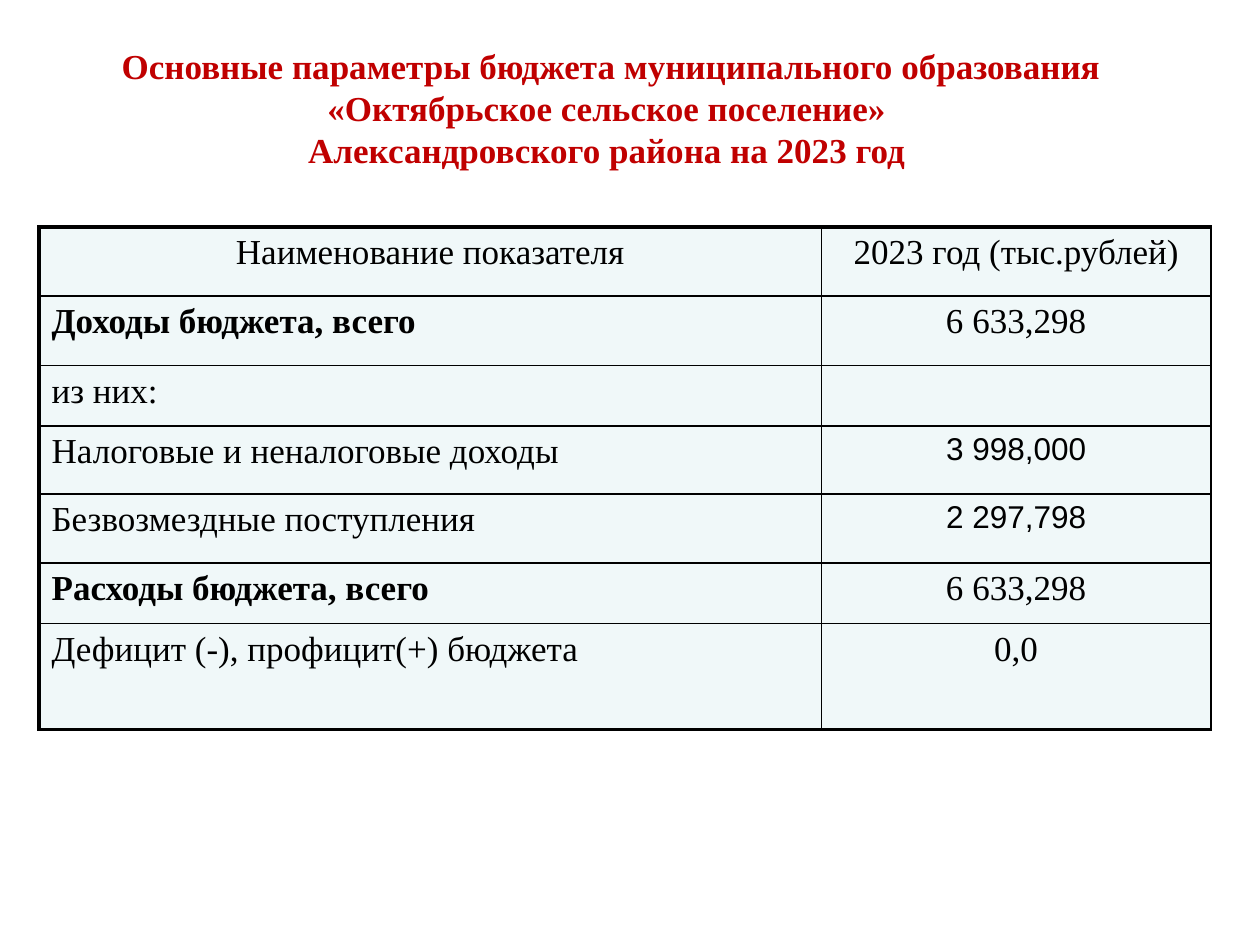
from lxml.etree import SubElement
from pptx import Presentation
from pptx.dml.color import RGBColor
from pptx.enum.text import MSO_ANCHOR as Anchor, PP_ALIGN as Align
from pptx.oxml.ns import qn
from pptx.util import Inches, Pt

WIDTH, HEIGHT = Inches(10), Inches(7.5)
SERIF, SANS = "Times New Roman", "Arial"
BLACK, RED, PALE = "000000", "C00000", "F0F8F9"
THIN, THICK = 1, 2.25
TITLE_BOX = (0.016, 0.04, 0.938, 0.148)
TABLE_BOX = (0.031, 0.24, 0.93, 0.532)
COLUMN_SHARES = (6.21, 3.09)
ROW_SHARES = (0.55, 0.55, 0.48, 0.54, 0.55, 0.48, 0.84)
TITLE = (
    "Основные параметры бюджета муниципального образования "
    "«Октябрьское сельское поселение» \vАлександровского района на 2023 год "
)
HEADER = ("Наименование показателя", "2023 год (тыс.рублей)")
BODY = {"name": SERIF, "size": Pt(20), "bold": False}
BOLD = {**BODY, "bold": True}
SMALL = {**BODY, "name": SANS, "size": Pt(18)}
INDICATORS = (
    ("Доходы бюджета, всего", BOLD, "6 633,298", BODY),
    ("из них:", BODY, "", BODY),
    ("Налоговые и неналоговые доходы", BODY, "3 998,000", SMALL),
    ("Безвозмездные поступления", BODY, "2 297,798", SMALL),
    ("Расходы бюджета, всего", BOLD, "6 633,298", BODY),
    ("Дефицит (-), профицит(+) бюджета", BODY, "0,0", BODY),
)


def color(value):
    """Turn a hex string into a colour."""
    return RGBColor.from_string(value)


def place(box):
    """Turn shares of the slide into left, top, width and height."""
    return [round(share * side) for share, side in zip(box, (WIDTH, HEIGHT) * 2)]


def write(frame, text, alignment, font_format, font_color):
    """Write one formatted paragraph into a text frame."""
    paragraph = frame.paragraphs[0]
    paragraph.text = text
    paragraph.alignment = alignment
    for font in [paragraph.font] + [run.font for run in paragraph.runs]:
        for name, value in font_format.items():
            setattr(font, name, value)
        font.color.rgb = color(font_color)


def set_borders(cell, widths):
    """Draw the left, right, top and bottom borders of a cell."""
    properties = cell._tc.get_or_add_tcPr()
    for index, (side, width) in enumerate(zip("LRTB", widths)):
        line = properties.makeelement(qn(f"a:ln{side}"), {"w": str(Pt(width))})
        fill = SubElement(line, qn("a:solidFill"))
        SubElement(fill, qn("a:srgbClr"), val=BLACK)
        properties.insert(index, line)


def add_title(slide, box):
    """Add the centred heading."""
    frame = slide.shapes.add_textbox(*place(box)).text_frame
    frame.word_wrap = True
    frame.vertical_anchor = Anchor.MIDDLE
    write(frame, TITLE, Align.CENTER, BOLD, RED)


def add_budget_table(slide, box):
    """Add the table of budget indicators."""
    left, top, width, height = place(box)
    rows = [(HEADER[0], BODY, HEADER[1], BODY), *INDICATORS]
    table = slide.shapes.add_table(len(rows), 2, left, top, width, height).table
    table.first_row = table.horz_banding = False
    for column, share in zip(table.columns, COLUMN_SHARES):
        column.width = round(width * share / sum(COLUMN_SHARES))
    for row, share in zip(table.rows, ROW_SHARES):
        row.height = round(height * share / sum(ROW_SHARES))
    last = len(rows) - 1
    for index, (label, label_format, amount, amount_format) in enumerate(rows):
        label_alignment = Align.LEFT if index else Align.CENTER
        parts = (
            (label, label_alignment, label_format),
            (amount, Align.CENTER, amount_format),
        )
        for column, (text, alignment, font_format) in enumerate(parts):
            cell = table.cell(index, column)
            write(cell.text_frame, text, alignment, font_format, BLACK)
            cell.fill.solid()
            cell.fill.fore_color.rgb = color(PALE)
            set_borders(cell, (
                THIN if column else THICK,
                THIN,
                THIN if index else THICK,
                THICK if index == last else THIN,
            ))


def main():
    """Build and save the presentation."""
    presentation = Presentation()
    presentation.slide_width, presentation.slide_height = WIDTH, HEIGHT
    slide = presentation.slides.add_slide(presentation.slide_layouts[6])
    add_title(slide, TITLE_BOX)
    add_budget_table(slide, TABLE_BOX)
    presentation.save("out.pptx")


if __name__ == "__main__":
    main()
